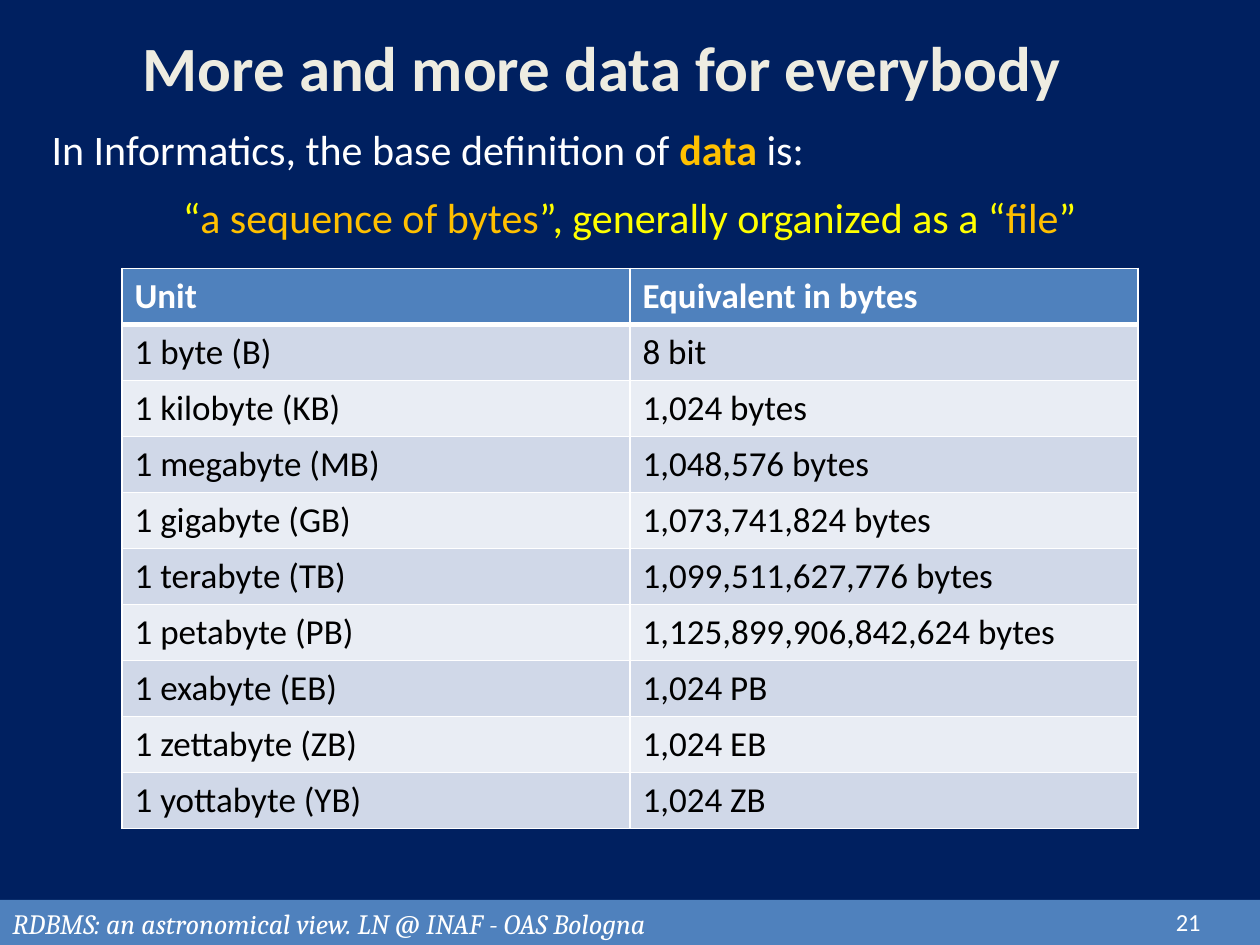
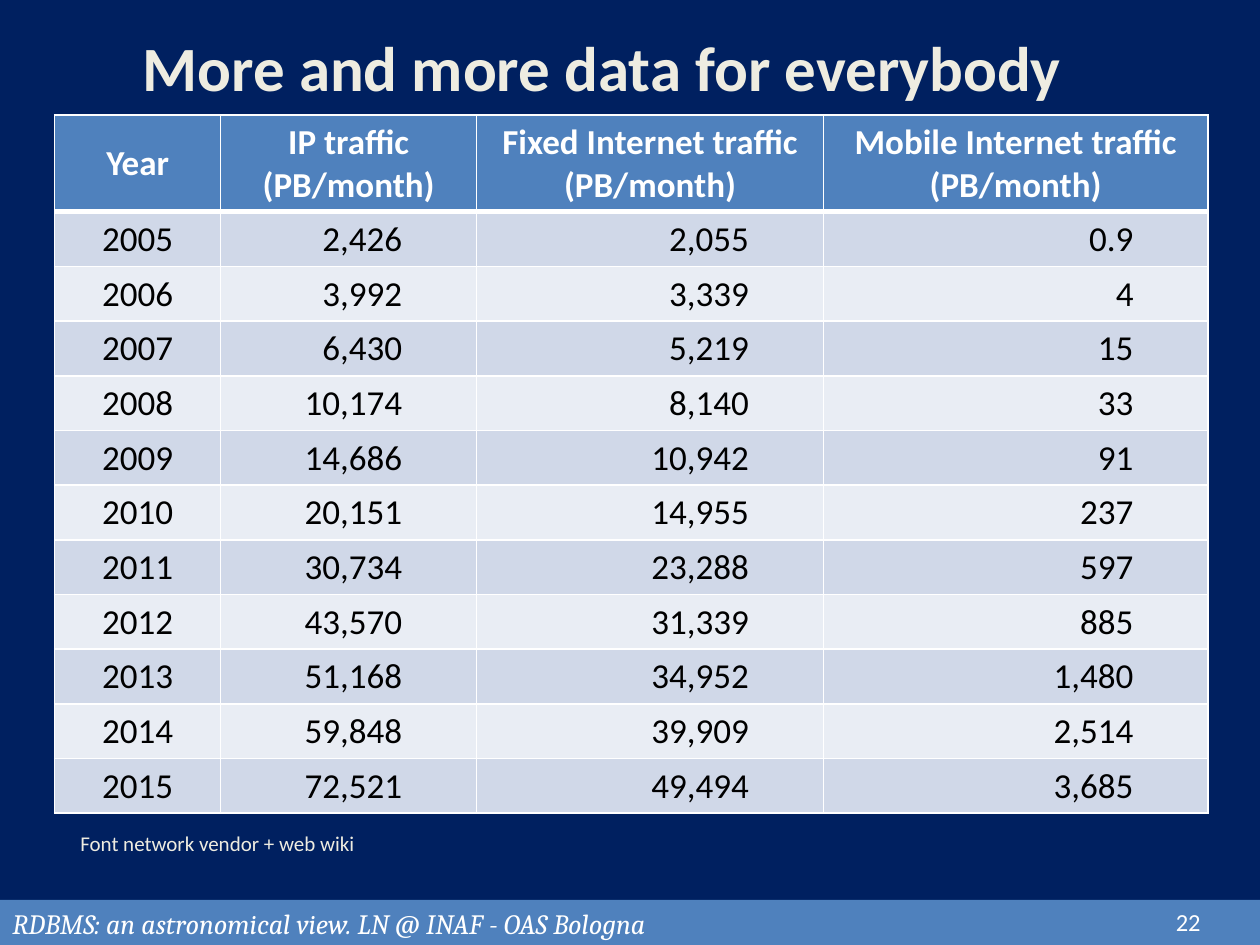
from lxml import etree
from pptx import Presentation
from pptx.dml.color import RGBColor
from pptx.enum import shapes, text
from pptx.oxml.ns import qn
from pptx.util import Cm, Pt

NAVY = RGBColor(0x00, 0x20, 0x60)
BLUE = RGBColor(0x4F, 0x81, 0xBD)
ROW_DARK = RGBColor(0xD0, 0xD8, 0xE8)
ROW_LIGHT = RGBColor(0xE9, 0xED, 0xF4)
CREAM = RGBColor(0xEE, 0xEC, 0xE1)
WHITE = RGBColor(0xFF, 0xFF, 0xFF)
BLACK = RGBColor(0x00, 0x00, 0x00)
YELLOW = RGBColor(0xFF, 0xFF, 0x00)
AMBER = RGBColor(0xFF, 0xC0, 0x00)

BODY_FONT = "Calibri"
FOOTER_FONT = "Cambria"
TITLE = "More and more data for everybody"
FOOTER = "RDBMS: an astronomical view. LN @ INAF - OAS Bologna"

LEFT, CENTER, RIGHT = text.PP_ALIGN.LEFT, text.PP_ALIGN.CENTER, text.PP_ALIGN.RIGHT
MIDDLE = text.MSO_ANCHOR.MIDDLE

UNITS = [
    ("Unit", "Equivalent in bytes"),
    ("1 byte (B)", "8 bit"),
    ("1 kilobyte (KB)", "1,024 bytes"),
    ("1 megabyte (MB)", "1,048,576 bytes"),
    ("1 gigabyte (GB)", "1,073,741,824 bytes"),
    ("1 terabyte (TB)", "1,099,511,627,776 bytes"),
    ("1 petabyte (PB)", "1,125,899,906,842,624 bytes"),
    ("1 exabyte (EB)", "1,024 PB"),
    ("1 zettabyte (ZB)", "1,024 EB"),
    ("1 yottabyte (YB)", "1,024 ZB"),
]

TRAFFIC = [
    ("Year", "IP traffic\n(PB/month)", "Fixed Internet traffic\n(PB/month)",
     "Mobile Internet traffic\n(PB/month)"),
    ("2005", "2,426", "2,055", "0.9"),
    ("2006", "3,992", "3,339", "4"),
    ("2007", "6,430", "5,219", "15"),
    ("2008", "10,174", "8,140", "33"),
    ("2009", "14,686", "10,942", "91"),
    ("2010", "20,151", "14,955", "237"),
    ("2011", "30,734", "23,288", "597"),
    ("2012", "43,570", "31,339", "885"),
    ("2013", "51,168", "34,952", "1,480"),
    ("2014", "59,848", "39,909", "2,514"),
    ("2015", "72,521", "49,494", "3,685"),
]


def add_run(p, words, size, color, bold=False, italic=False, font=BODY_FONT):
    r = p.add_run()
    r.text = words
    r.font.name, r.font.size = font, Pt(size)
    r.font.bold, r.font.italic = bold, italic
    r.font.color.rgb = color


def add_text_box(slide, left, top, width, height, wrap=True):
    tf = slide.shapes.add_textbox(Cm(left), Cm(top), Cm(width), Cm(height)).text_frame
    tf.word_wrap = wrap
    return tf


def add_footer(slide, number):
    sp = slide.shapes.add_shape(shapes.MSO_SHAPE.RECTANGLE,
                                Cm(0), Cm(18.14), Cm(25.4), Cm(0.93))
    sp.shadow.inherit = False
    sp.fill.solid()
    sp.fill.fore_color.rgb = BLUE
    sp.line.fill.background()
    p = sp.text_frame.paragraphs[0]
    p.alignment = LEFT
    add_run(p, FOOTER, 16, WHITE, italic=True, font=FOOTER_FONT)

    tf = add_text_box(slide, 23.22, 18.19, 1.47, 0.79)
    tf.vertical_anchor = MIDDLE
    tf.paragraphs[0].alignment = CENTER
    add_run(tf.paragraphs[0], str(number), 14, WHITE)


def add_slide(prs, number):
    """Add a slide with the shared background, title and footer."""
    slide = prs.slides.add_slide(prs.slide_layouts[5])
    slide.background.fill.solid()
    slide.background.fill.fore_color.rgb = NAVY
    add_footer(slide, number)
    title = slide.shapes.title
    title.left, title.top = Cm(2.62), Cm(0.3)
    title.width, title.height = Cm(20.19), Cm(2.06)
    tf = title.text_frame
    tf.vertical_anchor = MIDDLE
    p = tf.paragraphs[0]
    p.alignment = LEFT
    add_run(p, TITLE, 36, CREAM, bold=True)
    return slide


def set_borders(cell, top, bottom):
    """Draw white borders, 1 pt at the sides and as given above and below."""
    tcPr = cell._tc.get_or_add_tcPr()
    for tag, width in (("a:lnL", 1), ("a:lnR", 1), ("a:lnT", top), ("a:lnB", bottom)):
        ln = etree.SubElement(tcPr, qn(tag), w=str(Pt(width)))
        fill = etree.SubElement(ln, qn("a:solidFill"))
        etree.SubElement(fill, qn("a:srgbClr"), val=str(WHITE))


def fill_cell(cell, words, row, align):
    header = row == 0
    set_borders(cell, top=3 if row == 1 else 1, bottom=3 if header else 1)
    cell.fill.solid()
    cell.fill.fore_color.rgb = BLUE if header else ROW_DARK if row % 2 else ROW_LIGHT
    cell.vertical_anchor = MIDDLE
    if align == RIGHT:
        cell.margin_right = Cm(1.5)
    tf = cell.text_frame
    for i, line in enumerate(words.split("\n")):
        p = tf.add_paragraph() if i else tf.paragraphs[0]
        p.alignment = align
        add_run(p, line, 20, WHITE if header else BLACK, bold=header)


def add_data_table(slide, data, left, top, widths, header_height, row_height,
                   header_align, body_aligns):
    height = header_height + row_height * (len(data) - 1)
    table = slide.shapes.add_table(len(data), len(widths), Cm(left), Cm(top),
                                   Cm(sum(widths)), Cm(height)).table
    for column, width in zip(table.columns, widths):
        column.width = Cm(width)
    for i, values in enumerate(data):
        table.rows[i].height = Cm(row_height if i else header_height)
        for j, words in enumerate(values):
            fill_cell(table.cell(i, j), words, i, body_aligns[j] if i else header_align)


def add_definition(slide):
    tf = add_text_box(slide, 0.79, 2.44, 23.8, 2.62)
    intro, quote = tf.paragraphs[0], tf.add_paragraph()
    quote.alignment = CENTER
    quote.space_before = Pt(10)
    for p in (intro, quote):
        p.line_spacing = 0.94
        p.space_after = Pt(2)
    add_run(intro, "In Informatics, the base definition of ", 24, WHITE)
    add_run(intro, "data", 24, AMBER, bold=True)
    add_run(intro, " is:", 24, WHITE)
    for words, color in (("“", YELLOW), ("a sequence of bytes", AMBER),
                         ("”, generally organized as a “", YELLOW),
                         ("file", AMBER), ("”", YELLOW)):
        add_run(quote, words, 24, color)


def main():
    prs = Presentation()
    prs.slide_width, prs.slide_height = Cm(25.4), Cm(19.05)

    slide = add_slide(prs, 21)
    add_data_table(slide, UNITS, 2.46, 5.41, [10.24, 10.24], 1.13, 1.13,
                   LEFT, [LEFT, LEFT])
    add_definition(slide)

    slide = add_slide(prs, 22)
    add_data_table(slide, TRAFFIC, 1.1, 2.32, [3.35, 5.16, 6.99, 7.75], 1.95, 1.1,
                   CENTER, [CENTER, RIGHT, RIGHT, RIGHT])
    tf = add_text_box(slide, 1.37, 16.61, 6.15, 0.76, wrap=False)
    add_run(tf.paragraphs[0], "Font network vendor + web wiki", 12, CREAM)

    prs.save("out.pptx")


if __name__ == "__main__":
    main()
